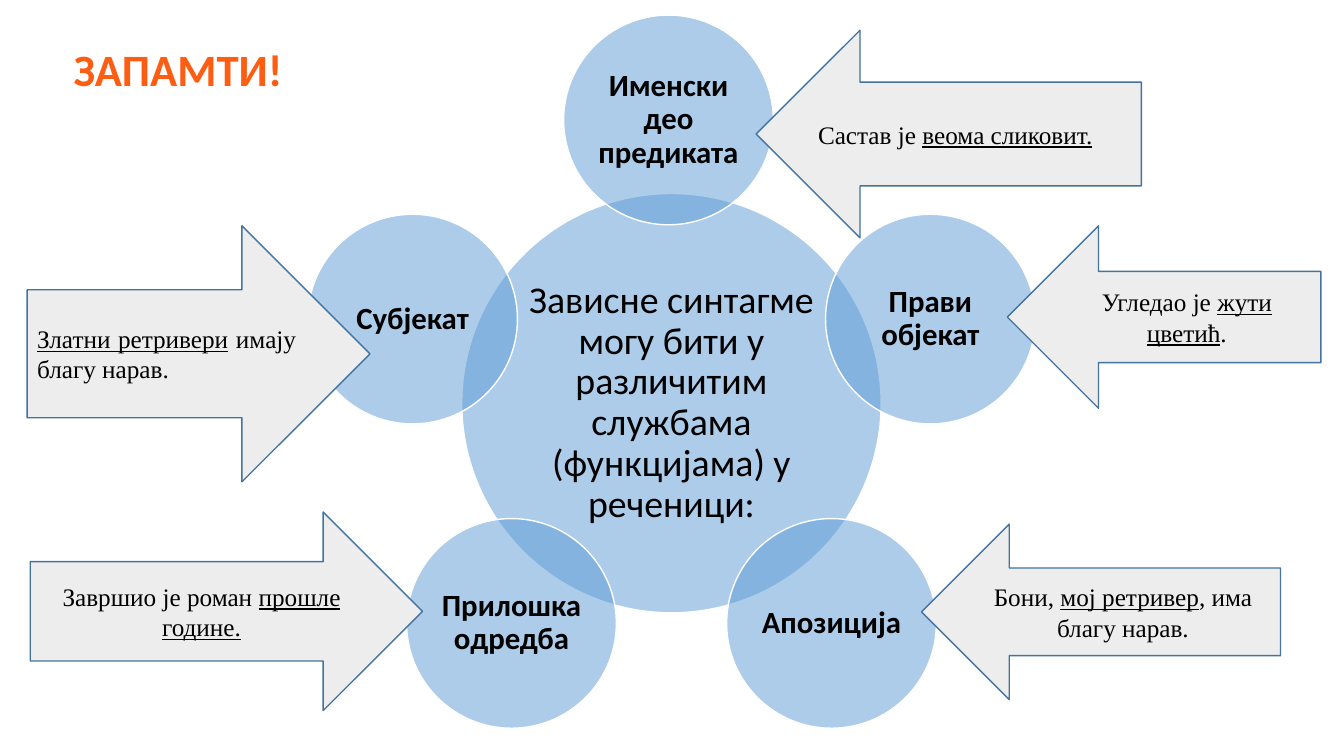
import math
from dataclasses import dataclass

from lxml import etree
from pptx import Presentation
from pptx.dml.color import RGBColor
from pptx.enum import shapes, text
from pptx.oxml.ns import qn
from pptx.util import Inches, Pt

COLORS = {
    "circle": "5B9BD5",
    "circle_line": "FFFFFF",
    "arrow": "EDEDED",
    "arrow_line": "43739E",
    "text": "000000",
    "title": "FF5D12",
}
HUB_CENTER = (6.66, 4.0)
HUB_DIAMETER = 4.16
SATELLITE_DIAMETER = 2.08
RING_RADIUS = 2.7
RIGHT = shapes.MSO_SHAPE.RIGHT_ARROW
LEFT = shapes.MSO_SHAPE.LEFT_ARROW
CENTER = text.PP_ALIGN.CENTER
JUSTIFY = text.PP_ALIGN.JUSTIFY


@dataclass
class Satellite:
    label: str
    shift: tuple[float, float] = (0, 0)


@dataclass
class ExampleArrow:
    """An example sentence; its runs are (wording, underlined)."""
    direction: shapes.MSO_SHAPE
    box: tuple[float, float, float, float]
    alignment: text.PP_ALIGN
    runs: list[tuple[str, bool]]


# Clockwise from the top of the ring
SATELLITES = [
    Satellite("Именски део предиката", shift=(-0.03, -0.11)),
    Satellite("Прави објекат"),
    Satellite("Апозиција"),
    Satellite("Прилошка одредба"),
    Satellite("Субјекат"),
]
ARROWS = [
    ExampleArrow(RIGHT, (0.27, 2.24, 3.4, 2.54), JUSTIFY,
                 [("Златни ретривери", True), (" имају благу нарав.", False)]),
    ExampleArrow(LEFT, (7.5, 0.3, 3.82, 2.06), JUSTIFY,
                 [("Састав је ", False), ("веома сликовит.", True)]),
    ExampleArrow(RIGHT, (0.3, 5.08, 3.89, 1.97), CENTER,
                 [("Завршио је роман ", False), ("прошле године.", True)]),
    ExampleArrow(LEFT, (9.14, 5.2, 3.56, 1.74), CENTER,
                 [("Бони, ", False), ("мој ретривер", True), (", има благу нарав.", False)]),
    ExampleArrow(LEFT, (9.99, 2.24, 3.11, 1.81), CENTER,
                 [("Угледао је ", False), ("жути цветић", True), (".", False)]),
]


def color(name: str) -> RGBColor:
    return RGBColor.from_string(COLORS[name])


def format_font(font, name: str, size: float, color_name: str = "text", bold: bool = False) -> None:
    font.name = name
    font.size = Pt(size)
    font.bold = bold
    font.color.rgb = color(color_name)


def add_filled_shape(slide, kind: shapes.MSO_SHAPE, box: tuple, fill: str, line: str):
    shape = slide.shapes.add_shape(kind, *map(Inches, box))
    shape.shadow.inherit = False
    shape.fill.solid()
    shape.fill.fore_color.rgb = color(fill)
    shape.line.color.rgb = color(line)
    shape.line.width = Pt(1)
    shape.text_frame.word_wrap = True
    shape.text_frame.vertical_anchor = text.MSO_ANCHOR.MIDDLE
    return shape


def add_circle(slide, center: tuple[float, float], diameter: float, label: str,
               size: float, inset: float, bold: bool) -> None:
    """Draw a half-transparent labelled circle around its center."""
    left, top = (value - diameter / 2 for value in center)
    circle = add_filled_shape(slide, shapes.MSO_SHAPE.OVAL, (left, top, diameter, diameter),
                              "circle", "circle_line")
    fill_color = circle.fill._xPr.find(qn("a:solidFill"))[0]
    etree.SubElement(fill_color, qn("a:alpha"), val="50000")
    frame = circle.text_frame
    frame.margin_left = frame.margin_right = Inches(inset)
    frame.margin_top = frame.margin_bottom = Inches(inset)
    frame.text = label
    paragraph = frame.paragraphs[0]
    paragraph.alignment = CENTER
    paragraph.line_spacing = 0.9
    format_font(paragraph.runs[0].font, "Calibri", size, bold=bold)


def add_ring(slide) -> None:
    """Place the satellites at equal angles around the hub."""
    for index, satellite in enumerate(SATELLITES):
        angle = 2 * math.pi * index / len(SATELLITES)
        center = (HUB_CENTER[0] + RING_RADIUS * math.sin(angle) + satellite.shift[0],
                  HUB_CENTER[1] - RING_RADIUS * math.cos(angle) + satellite.shift[1])
        add_circle(slide, center, SATELLITE_DIAMETER, satellite.label, 22, 0.03, True)


def add_example(slide, example: ExampleArrow) -> None:
    arrow = add_filled_shape(slide, example.direction, example.box, "arrow", "arrow_line")
    paragraph = arrow.text_frame.paragraphs[0]
    paragraph.alignment = example.alignment
    for wording, underlined in example.runs:
        run = paragraph.add_run()
        run.text = wording
        format_font(run.font, "Times New Roman", 18)
        run.font.underline = underlined


def set_title(slide, wording: str) -> None:
    title = slide.shapes.title
    title.left, title.top, title.width, title.height = map(Inches, (0.63, 0.36, 4.86, 0.64))
    title.text_frame.text = wording
    title.text_frame.vertical_anchor = text.MSO_ANCHOR.TOP
    paragraph = title.text_frame.paragraphs[0]
    paragraph.alignment = text.PP_ALIGN.LEFT
    format_font(paragraph.runs[0].font, "Calibri", 32, "title", True)


def main() -> None:
    presentation = Presentation()
    presentation.slide_width = Inches(13.33)
    presentation.slide_height = Inches(7.5)
    slide = presentation.slides.add_slide(presentation.slide_layouts[5])
    set_title(slide, "ЗАПАМТИ!")
    add_circle(slide, HUB_CENTER, HUB_DIAMETER,
               "Зависне синтагме могу бити у различитим службама (функцијама) у реченици:",
               27, 0.04, False)
    add_ring(slide)
    for example in ARROWS:
        add_example(slide, example)
    presentation.save("out.pptx")


if __name__ == "__main__":
    main()
